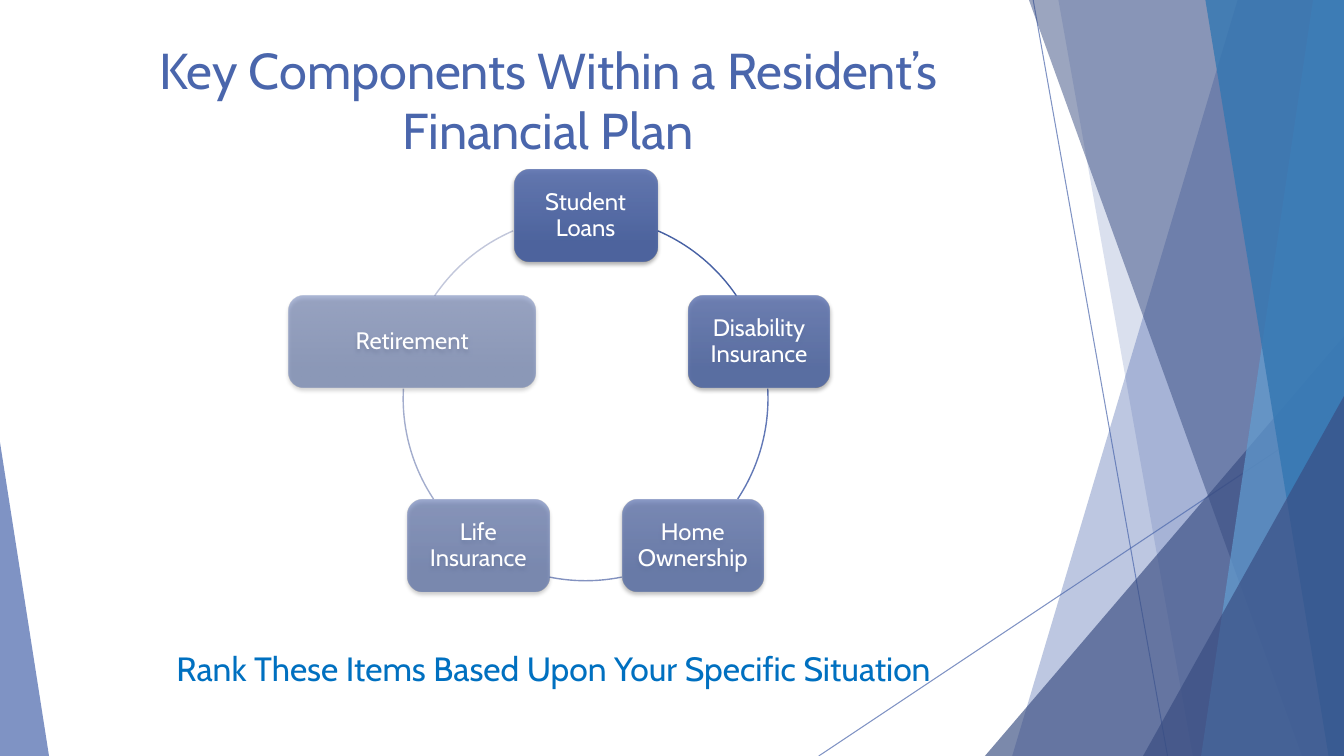
from math import cos, radians, sin

from lxml.etree import SubElement
from pptx import Presentation
from pptx.dml.color import RGBColor
from pptx.enum.shapes import MSO_CONNECTOR, MSO_SHAPE
from pptx.enum.text import MSO_ANCHOR, MSO_AUTO_SIZE, PP_ALIGN
from pptx.oxml.ns import qn
from pptx.util import Pt

FONT = "Cabin"
HUES = {
    "blue": "4A66AC", "navy": "384C81", "sky": "629DD1", "sea": "3477B2",
    "top": "5C72B0", "base": "445D9D", "note": "0070C0",
    "white": "FFFFFF", "black": "000000",
}
NODES = [
    ("Student Loans", 102, 90),
    ("Disability Insurance", 101, 80),
    ("Home Ownership", 101, 70),
    ("Life Insurance", 101, 60),
    ("Retirement", 176, 50),
]
ARCS = [
    (293.4, 325.8, "4761A4"),
    (357, 33.5, "6278B6"),
    (78.6, 101.4, "8392C0"),
    (146.5, 183, "A3ADCD"),
    (214.2, 246.6, "C2C7DB"),
]


def rgb(hue):
    return RGBColor.from_string(HUES.get(hue, hue))


def fade(part, alpha):
    for tag in part.iter(qn("a:srgbClr")):
        SubElement(tag, qn("a:alpha"), val=str(alpha * 1000))


def paint(shape, hue, alpha):
    shape.shadow.inherit = False
    shape.fill.solid()
    shape.fill.fore_color.rgb = rgb(hue)
    shape.line.fill.background()
    fade(shape.fill._xPr, alpha)


def write(shape, text, size, hue, align=PP_ALIGN.CENTER, anchor=MSO_ANCHOR.TOP,
          wrap=True, space=1.0, inset=None):
    frame = shape.text_frame
    frame.text = text
    frame.word_wrap = wrap
    frame.auto_size = MSO_AUTO_SIZE.NONE
    frame.vertical_anchor = anchor
    if inset is not None:
        frame.margin_left = frame.margin_right = Pt(inset)
        frame.margin_top = frame.margin_bottom = Pt(inset)
    para = frame.paragraphs[0]
    para.alignment = align
    para.line_spacing = space
    font = para.runs[0].font
    font.name, font.size = FONT, Pt(size)
    font.color.rgb = rgb(hue)


def rule(slide, start, end):
    line = slide.shapes.add_connector(
        MSO_CONNECTOR.STRAIGHT, *map(Pt, start + end))
    line.line.color.rgb = rgb("blue")
    line.line.width = Pt(0.75)
    props = line._element.spPr
    fade(props, 70)
    SubElement(props, qn("a:effectLst"))


def wedge(slide, box, peak, hue, alpha):
    shape = slide.shapes.add_shape(
        MSO_SHAPE.ISOSCELES_TRIANGLE, *map(Pt, box))
    shape.adjustments[0] = peak
    paint(shape, hue, alpha)


def facet(slide, box, high, low, hue, alpha):
    left, top, width, height = box
    right, base = left + width, top + height
    path = slide.shapes.build_freeform(left + high, top, scale=Pt(1))
    path.add_line_segments(
        [(right, top), (right, base), (left + low, base)], close=True)
    paint(path.convert_to_shape(), hue, alpha)


def decor(slide, box):
    left, top, width, height = box
    right, base = left + width, top + height
    rule(slide, (left + 158, top), (left + 254, base))
    rule(slide, (right, top + 290), (left + 4.8, base))
    facet(slide, box, 304, 143, "blue", 36)
    facet(slide, box, 176, 272, "blue", 20)
    wedge(slide, (right - 256.5, base - 300, 256.5, 300), 1, "navy", 66)
    facet(slide, box, 155, 349.5, "navy", 50)
    facet(slide, box, 358, 278, "sky", 70)
    facet(slide, box, 281, 369, "sea", 80)
    wedge(slide, (right - 143.5, base - 257, 143.5, 257), 1, "navy", 66)


def arc(slide, box, start, end, hue):
    shape = slide.shapes.add_shape(MSO_SHAPE.ARC, *map(Pt, box))
    shape.adjustments[0] = start * 0.6
    shape.adjustments[1] = end * 0.6
    shape.shadow.inherit = False
    shape.fill.background()
    shape.line.color.rgb = rgb(hue)
    shape.line.width = Pt(1)


def shade(shape):
    shape.shadow.inherit = False
    glow = SubElement(
        shape._element.spPr.find(qn("a:effectLst")), qn("a:outerShdw"),
        blurRad=str(Pt(3)), dist=str(Pt(2)), dir="5400000", rotWithShape="0")
    SubElement(glow, qn("a:srgbClr"), val=HUES["black"])
    fade(glow, 35)


def node(slide, box, text, alpha):
    shape = slide.shapes.add_shape(MSO_SHAPE.ROUNDED_RECTANGLE, *map(Pt, box))
    shape.line.fill.background()
    fill = shape.fill
    fill.gradient()
    fill.gradient_angle = 270
    for stop, hue, place in zip(fill.gradient_stops, ("top", "base"), (0, 0.78)):
        stop.color.rgb = rgb(hue)
        stop.position = place
    fade(fill._xPr, alpha)
    shade(shape)
    write(shape, text, 17, "white", anchor=MSO_ANCHOR.MIDDLE, space=0.9, inset=8)


def cycle(slide, box):
    left, top, size, _ = box
    reach = size / 2
    tall = 65.5
    for start, end, hue in ARCS:
        arc(slide, box, start, end, hue)
    for step, (text, wide, alpha) in enumerate(NODES):
        turn = radians(step * 360 / len(NODES))
        mid = left + reach + reach * sin(turn)
        level = top + reach - reach * cos(turn)
        node(slide, (mid - wide / 2, level - tall / 2, wide, tall), text, alpha)


def head(slide, box):
    title = slide.shapes.title
    title.left, title.top, title.width, title.height = map(Pt, box)
    write(title, "Key Components Within a Resident’s Financial Plan", 36, "blue")


def note(slide, box):
    label = slide.shapes.add_textbox(*map(Pt, box))
    write(label, "Rank These Items Based Upon Your Specific Situation", 24, "note",
          align=PP_ALIGN.LEFT, wrap=False)


def main():
    deck = Presentation()
    deck.slide_width, deck.slide_height = Pt(960), Pt(540)
    slide = deck.slides.add_slide(deck.slide_layouts[5])
    decor(slide, (580, 0, 380, 540))
    wedge(slide, (0, 316, 35, 224), 0, "blue", 70)
    head(slide, (53, 24, 677, 84))
    cycle(slide, (288, 154.2, 260.6, 260.6))
    note(slide, (119, 459.5, 595, 36))
    deck.save("out.pptx")


if __name__ == "__main__":
    main()
